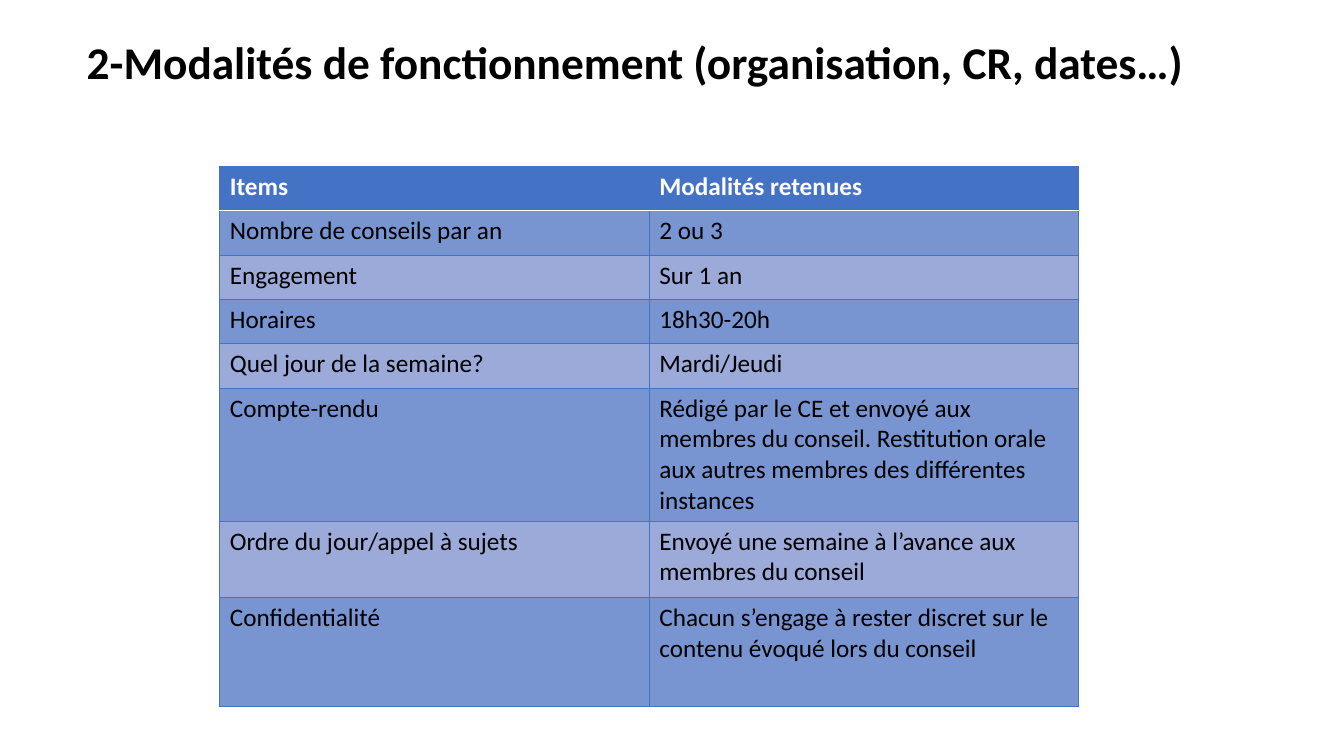
from lxml.etree import SubElement
from pptx import Presentation
from pptx.dml.color import RGBColor
from pptx.enum.text import MSO_ANCHOR, MSO_AUTO_SIZE, PP_ALIGN
from pptx.oxml.ns import qn
from pptx.util import Inches, Pt

TITLE = "2-Modalités de fonctionnement (organisation, CR, dates…)"
ROWS = [
    ("Items", "Modalités retenues", 0.44),
    ("Nombre de conseils par an", "2 ou 3", 0.44),
    ("Engagement", "Sur 1 an", 0.44),
    ("Horaires", "18h30-20h", 0.44),
    ("Quel jour de la semaine?", "Mardi/Jeudi", 0.44),
    ("Compte-rendu", "Rédigé par le CE et envoyé aux membres du conseil. "
     "Restitution orale aux autres membres des différentes instances", 1.32),
    ("Ordre du jour/appel à sujets",
     "Envoyé une semaine à l’avance aux membres du conseil", 0.76),
    ("Confidentialité", "Chacun s’engage à rester discret sur le contenu "
     "évoqué lors du conseil", 1.08),
]
BLUE = RGBColor(0x44, 0x72, 0xC4)
DARK = RGBColor(0x79, 0x95, 0xD1)
LIGHT = RGBColor(0x9B, 0xAA, 0xD9)
WHITE = RGBColor(0xFF, 0xFF, 0xFF)
BLACK = RGBColor(0, 0, 0)
COL = 4.26


def style(font, size, color, bold):
    """Apply the slide's typeface with a size, colour and weight."""
    form = {"name": "Calibri", "size": Pt(size), "bold": bold}
    for key, value in form.items():
        setattr(font, key, value)
    font.color.rgb = color


def border(cell, side, color, width):
    """Draw one side of a table cell."""
    props = cell._tc.get_or_add_tcPr()
    line = SubElement(props, qn(f"a:ln{side}"), w=str(Pt(width)))
    fill = SubElement(line, qn("a:solidFill"))
    SubElement(fill, qn("a:srgbClr"), val=str(color))


def add_title(slide):
    """Place and format the title."""
    title = slide.shapes.title
    place = {"left": 0.76, "top": 0.26, "width": 11.34, "height": 0.77}
    for key, value in place.items():
        setattr(title, key, Inches(value))
    frame = title.text_frame
    frame.text = TITLE
    form = {"auto_size": MSO_AUTO_SIZE.NONE, "word_wrap": True,
            "vertical_anchor": MSO_ANCHOR.MIDDLE}
    for key, value in form.items():
        setattr(frame, key, value)
    line = frame.paragraphs[0]
    line.alignment = PP_ALIGN.LEFT
    line.line_spacing = 0.9
    style(line.runs[0].font, 32.4, BLACK, True)


def add_grid(slide):
    """Build the table with its header and banded rows."""
    high = sum(row[-1] for row in ROWS)
    table = slide.shapes.add_table(
        len(ROWS), 2, Inches(2.18), Inches(1.65),
        Inches(2 * COL), Inches(high)).table
    for col in table.columns:
        col.width = Inches(COL)
    for i, (*texts, tall) in enumerate(ROWS):
        table.rows[i].height = Inches(tall)
        head = i == 0
        back = BLUE if head else DARK if i % 2 else LIGHT
        for j, text in enumerate(texts):
            cell = table.cell(i, j)
            cell.text = text
            ink = WHITE if head else BLACK
            style(cell.text_frame.paragraphs[0].runs[0].font, 18, ink, head)
            for side in "LRTB":
                split = (i, side) in ((0, "B"), (1, "T"))
                border(cell, side, *((WHITE, 1) if split else (BLUE, 0.5)))
            cell.fill.solid()
            cell.fill.fore_color.rgb = back


def main():
    """Create and save the slide."""
    deck = Presentation()
    deck.slide_width, deck.slide_height = Inches(13.33), Inches(7.5)
    slide = deck.slides.add_slide(deck.slide_layouts[5])
    add_title(slide)
    add_grid(slide)
    deck.save("out.pptx")


if __name__ == "__main__":
    main()
